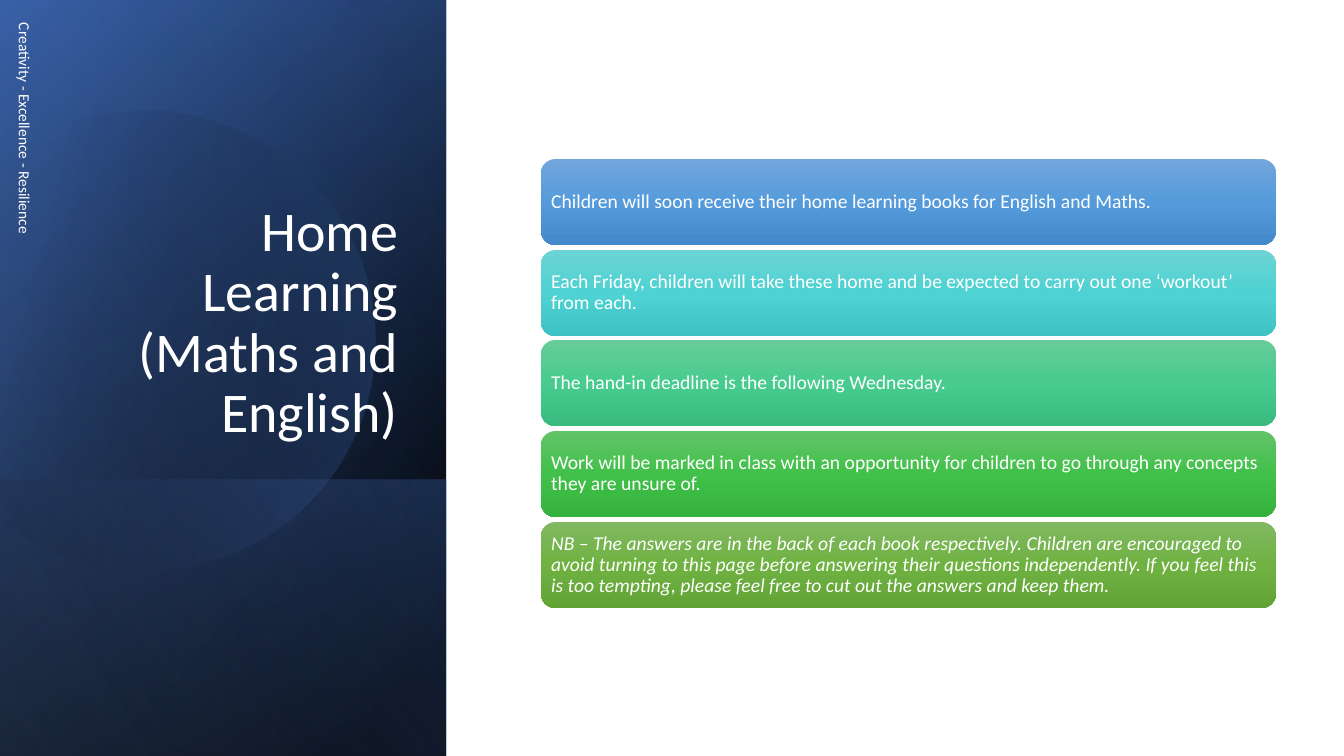
import math
from dataclasses import dataclass

import pptx
import pptx.dml.color
import pptx.enum.shapes
import pptx.enum.text
import pptx.oxml
import pptx.oxml.ns
import pptx.util

SCALE = 914400 / 100.8
FONT = "Calibri"
WHITE = "FFFFFF"
SPACE = pptx.oxml.ns.nsdecls("a")
KIND = pptx.enum.shapes.MSO_SHAPE
ALIGN = pptx.enum.text.PP_ALIGN
ANCHOR = pptx.enum.text.MSO_ANCHOR


@dataclass
class Stop:
    pos: int
    color: str
    alpha: int = 100


@dataclass
class Panel:
    top: int
    height: int
    angle: int
    stops: list[Stop]


@dataclass
class Card:
    text: str
    colors: tuple[str, str, str]
    italic: bool = False


SIDE = 446
BASE = [
    Panel(0, 756, 50, [Stop(8, "000000"), Stop(100, "2F5597")]),
    Panel(0, 756, 30, [Stop(0, "000000", 0), Stop(99, "4472C4", 46)]),
    Panel(480, 276, 130, [Stop(2, "4472C4", 29), Stop(100, "000000", 30)]),
]
GLOW = Panel(0, 756, 120, [Stop(0, "000000", 0), Stop(99, "8FAADC", 11)])

DISC_BOX = (-55, 107, 430, 461)
DISC_TURN = 343.9
DISC_STOPS = [Stop(29, "000000", 0), Stop(100, "4472C4", 43)]
# Outline as it lies on the slide: one point is a line, three are a curve.
DISC_PATH = [
    ("moveTo", [(150, 111)]),
    ("cubicBezTo", [(248, 113), (338, 178), (366, 277)]),
    ("cubicBezTo", [(401, 400), (331, 527), (209, 562)]),
    ("cubicBezTo", [(132, 585), (53, 566), (-3, 518)]),
    ("lnTo", [(-15, 507)]),
    ("lnTo", [(-15, 176)]),
    ("lnTo", [(0, 162)]),
    ("cubicBezTo", [(23, 143), (50, 128), (81, 120)]),
    ("cubicBezTo", [(104, 114), (127, 111), (150, 111)]),
]

CARDS = [
    Card("Children will soon receive their home learning books for English and Maths.",
         ("71A6DB", "559BDB", "448ACA")),
    Card("Each Friday, children will take these home and be expected to carry out "
         "one ‘workout’ from each.",
         ("6CD3D3", "4ED2D3", "3EC2C3")),
    Card("The hand-in deadline is the following Wednesday.",
         ("67CC9A", "47CB8E", "39BB7F")),
    Card("Work will be marked in class with an opportunity for children to go "
         "through any concepts they are unsure of.",
         ("63C368", "42C14A", "34B23D")),
    Card("NB – The answers are in the back of each book respectively. Children are "
         "encouraged to avoid turning to this page before answering their questions "
         "independently. If you feel this is too tempting, please feel free to cut "
         "out the answers and keep them.",
         ("81B861", "6FB242", "62A336"), True),
]


def px(size: float) -> int:
    return round(size * SCALE)


def rgb(color: str) -> pptx.dml.color.RGBColor:
    return pptx.dml.color.RGBColor.from_string(color)


def shade(shape, stops: list[Stop], angle: int) -> None:
    """Give a shape a linear gradient with see-through stops, and no line."""
    shape.shadow.inherit = False
    shape.line.fill.background()
    shape.fill.gradient()
    marks = "".join(
        f'<a:gs pos="{stop.pos * 1000}"><a:srgbClr val="{stop.color}">'
        f'<a:alpha val="{stop.alpha * 1000}"/></a:srgbClr></a:gs>'
        for stop in stops
    )
    grad = pptx.oxml.parse_xml(
        f'<a:gradFill {SPACE} rotWithShape="1"><a:gsLst>{marks}</a:gsLst>'
        f'<a:lin ang="{angle * 60000}" scaled="0"/></a:gradFill>'
    )
    props = shape._element.spPr
    props.replace(props.find(pptx.oxml.ns.qn("a:gradFill")), grad)


def write(shape, text: str, size: int, align=ALIGN.LEFT, anchor=ANCHOR.MIDDLE,
          space: float = 1.0, italic: bool = False) -> None:
    frame = shape.text_frame
    frame.word_wrap = True
    frame.vertical_anchor = anchor
    para = frame.paragraphs[0]
    para.alignment = align
    para.line_spacing = space
    run = para.add_run()
    run.text = text
    run.font.name = FONT
    run.font.size = pptx.util.Pt(size)
    run.font.italic = italic
    run.font.color.rgb = rgb(WHITE)


def add_panel(shapes, panel: Panel) -> None:
    """Draw a side panel as a mirrored box turned a quarter."""
    left = (SIDE - panel.height) / 2
    top = panel.top + (panel.height - SIDE) / 2
    shape = shapes.add_shape(KIND.RECTANGLE, px(left), px(top),
                             px(panel.height), px(SIDE))
    shape.rotation = 90
    shape._element.spPr.find(pptx.oxml.ns.qn("a:xfrm")).set("flipH", "1")
    shade(shape, panel.stops, panel.angle)


def disc_point(x: int, y: int) -> str:
    """Turn a slide point back into the disc's own unturned box."""
    left, top, width, height = DISC_BOX
    turn = math.radians(-DISC_TURN)
    dx, dy = x - left - width / 2, y - top - height / 2
    new_x = width / 2 + dx * math.cos(turn) - dy * math.sin(turn)
    new_y = height / 2 + dx * math.sin(turn) + dy * math.cos(turn)
    return f'<a:pt x="{px(new_x)}" y="{px(new_y)}"/>'


def add_disc(shapes) -> None:
    """Draw the turned disc, its box first and then its curved outline."""
    left, top, width, height = DISC_BOX
    right, base = left + width, top + height
    build = shapes.build_freeform(left, top, scale=SCALE)
    build.add_line_segments([(right, top), (right, base), (left, base)])
    shape = build.convert_to_shape()
    steps = "".join(
        f"<a:{step}>{''.join(disc_point(*point) for point in points)}</a:{step}>"
        for step, points in DISC_PATH
    )
    curve = pptx.oxml.parse_xml(
        f'<a:path {SPACE} w="{px(width)}" h="{px(height)}">{steps}<a:close/></a:path>'
    )
    paths = shape._element.spPr.find(".//" + pptx.oxml.ns.qn("a:pathLst"))
    paths.replace(paths[0], curve)
    shape.rotation = DISC_TURN
    shade(shape, DISC_STOPS, 30)


def add_card(shapes, card: Card, top: int) -> None:
    shape = shapes.add_shape(KIND.ROUNDED_RECTANGLE, px(541), px(top),
                             px(735), px(86))
    shade(shape, [Stop(50 * i, color) for i, color in enumerate(card.colors)], 90)
    frame = shape.text_frame
    frame.margin_left = frame.margin_right = px(6)
    frame.margin_top = frame.margin_bottom = px(6)
    write(shape, card.text, 14, space=0.9, italic=card.italic)


def main() -> None:
    deck = pptx.Presentation()
    deck.slide_width, deck.slide_height = px(1344), px(756)
    shapes = deck.slides.add_slide(deck.slide_layouts[6]).shapes

    for panel in BASE:
        add_panel(shapes, panel)
    add_disc(shapes)
    add_panel(shapes, GLOW)

    title = shapes.add_textbox(px(64), px(186), px(344), px(264))
    write(title, "Home Learning (Maths and English)", 40, ALIGN.RIGHT,
          ANCHOR.BOTTOM, 0.9)
    motto = shapes.add_textbox(px(-202), px(220), px(454), px(40))
    motto.rotation = 90
    write(motto, "Creativity - Excellence - Resilience", 11)

    for i, card in enumerate(CARDS):
        add_card(shapes, card, 159 + round(i * 90.65))
    deck.save("out.pptx")


if __name__ == "__main__":
    main()
